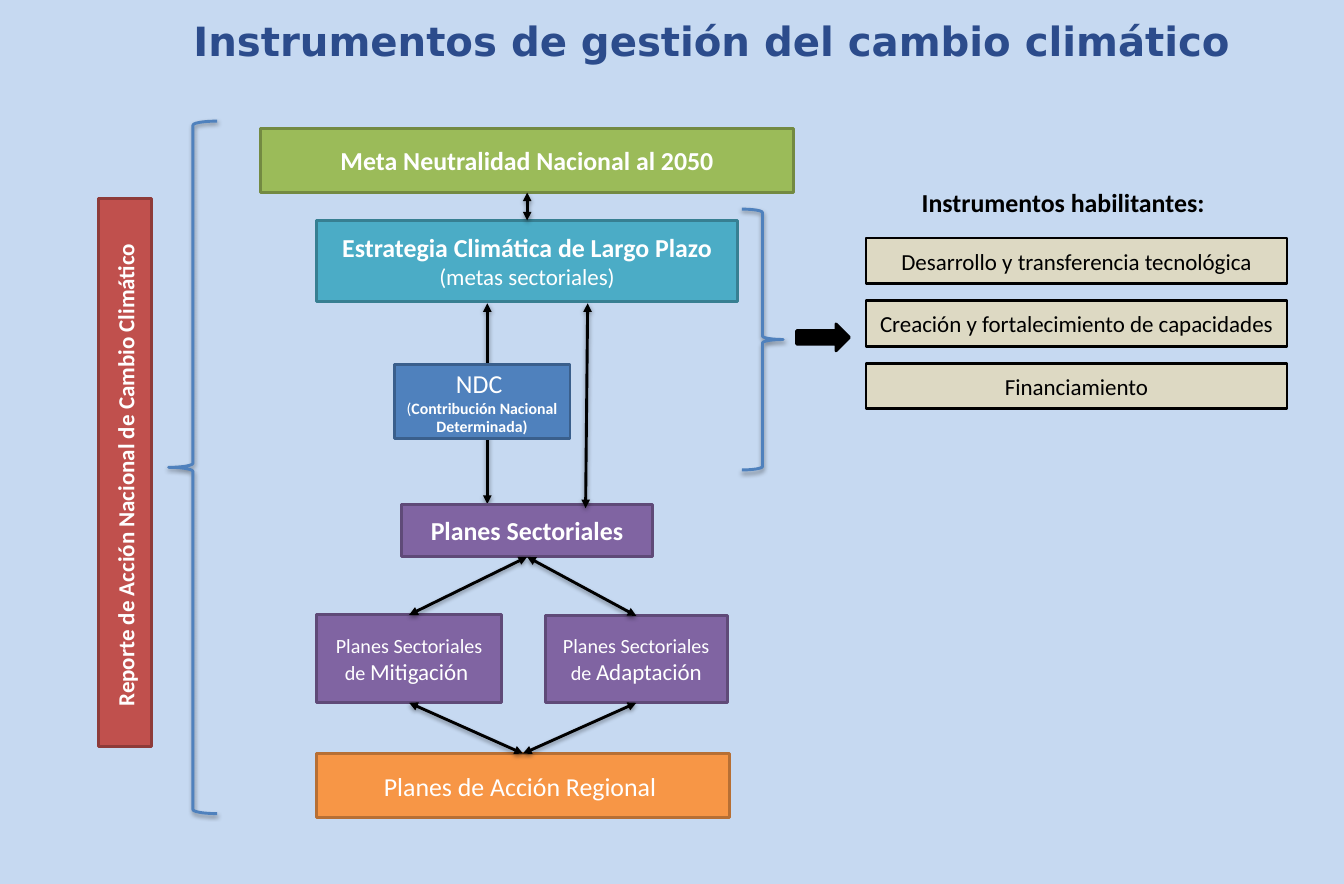
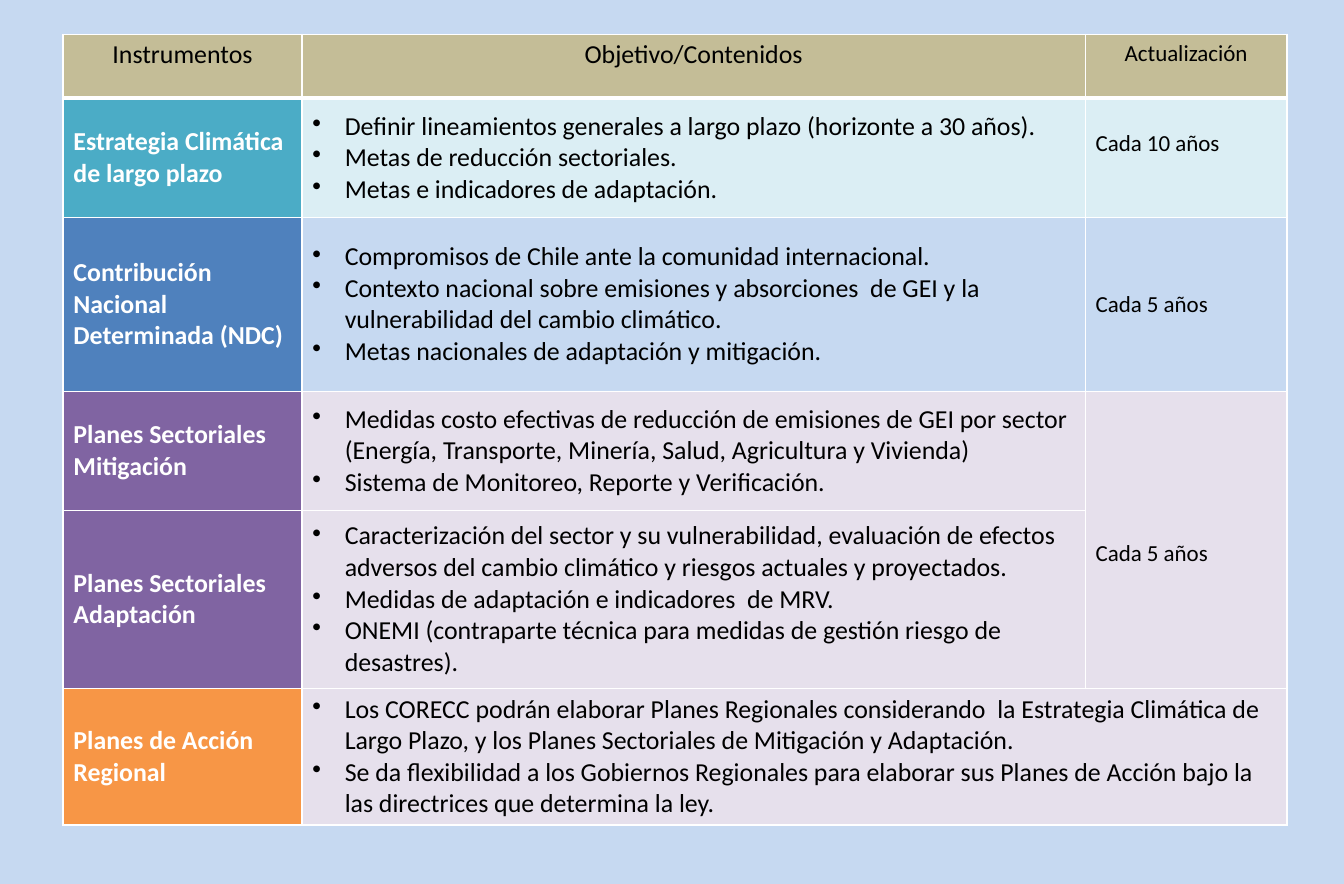
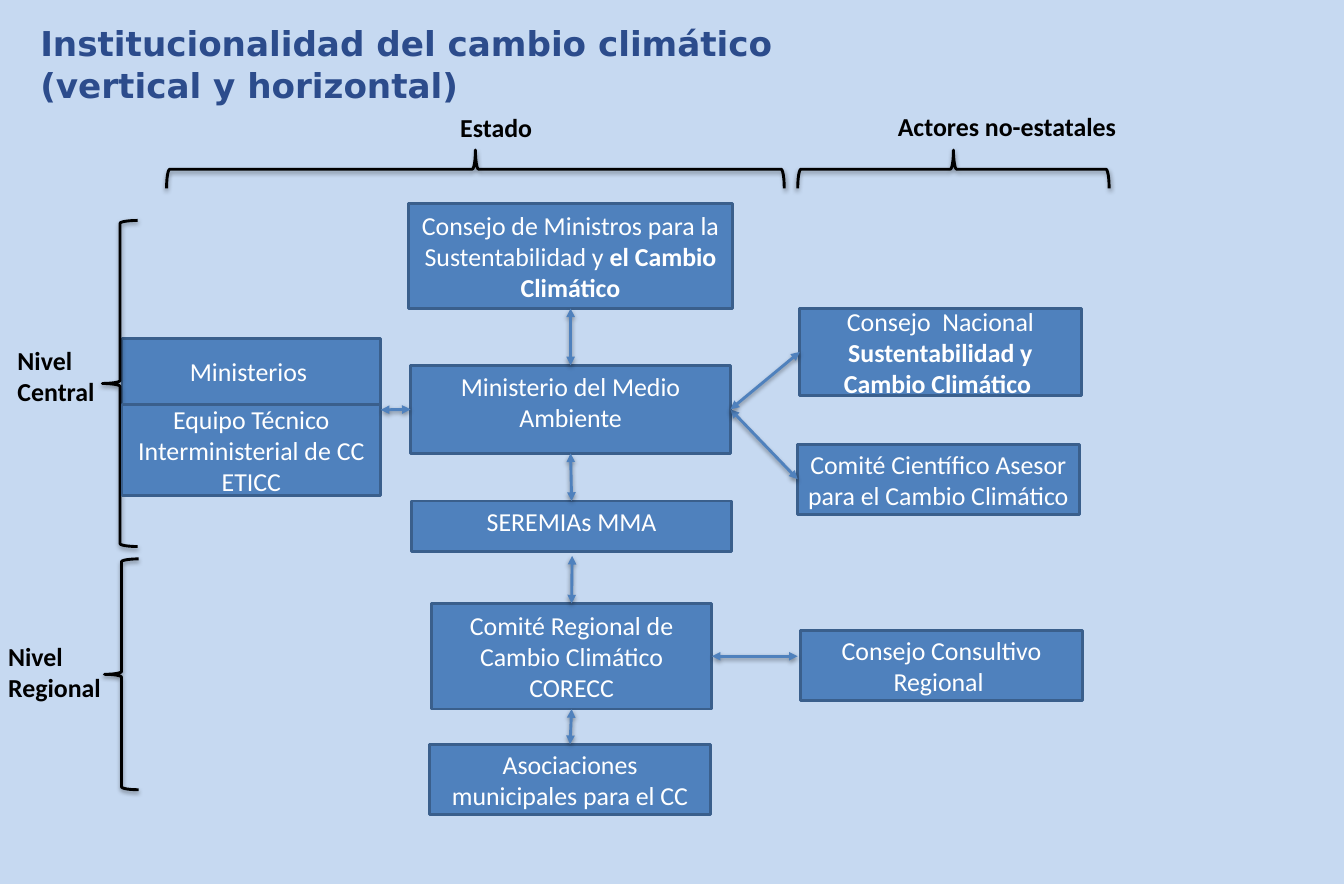
from dataclasses import dataclass

from lxml import etree
from pptx import Presentation
from pptx.dml.color import RGBColor
from pptx.enum.shapes import MSO_CONNECTOR, MSO_SHAPE
from pptx.enum.text import MSO_ANCHOR, PP_ALIGN
from pptx.oxml.ns import qn
from pptx.util import Emu, Pt

RECT, ARROW = MSO_SHAPE.RECTANGLE, MSO_SHAPE.RIGHT_ARROW
LBRACE, RBRACE = MSO_SHAPE.LEFT_BRACE, MSO_SHAPE.RIGHT_BRACE
STRAIGHT = MSO_CONNECTOR.STRAIGHT
LEFT, CENTER = PP_ALIGN.LEFT, PP_ALIGN.CENTER
TOP_ANC, MID_ANC = MSO_ANCHOR.TOP, MSO_ANCHOR.MIDDLE
TOP, WEST, BASE, EAST = range(4)

# The grid has square cells, ten to the inch.
CELL = 91440
COLS, ROWS = 129.9, 85.4


@dataclass(frozen=True)
class Theme:
    face: str = "Calibri"
    head: str = "DejaVu Sans"
    tiny: float = 11
    small: float = 14
    mid: float = 16
    body: float = 18
    sub: float = 23.8
    title: float = 28
    line: float = 2
    back: str = "C6D9F1"
    navy: str = "2C4C8C"
    black: str = "000000"
    white: str = "FFFFFF"
    stroke: str = "4F81BD"
    # Box styles: fill, outline, text
    blue: tuple = ("4F81BD", "3A5F8C", "FFFFFF")
    teal: tuple = ("4BACC6", "377F92", "FFFFFF")
    violet: tuple = ("8064A2", "5F4A78", "FFFFFF")
    orange: tuple = ("F79646", "B76F34", "FFFFFF")
    green: tuple = ("9BBB59", "738A42", "FFFFFF")
    red: tuple = ("C0504D", "8E3B39", "FFFFFF")
    sand: tuple = ("DDD9C3", "000000", "000000")
    ink: tuple = ("000000", "000000", "FFFFFF")
    # Table tints
    khaki: str = "C4BD97"
    aqua: str = "DBEEF4"
    lilac: str = "E6E0EC"


T = Theme()


def grid(*cells):
    return [Emu(round(n * CELL)) for n in cells]


def rgb(code):
    return RGBColor.from_string(code)


def bit(text, size=T.body, bold=False):
    """One run of text."""
    return text, size, bold


def write(frame, paras, color, align=LEFT, face=T.face, bullet=False):
    """Fill a frame; each paragraph is a list of runs."""
    frame.word_wrap = True
    for i, runs in enumerate(paras):
        para = frame.add_paragraph() if i else frame.paragraphs[0]
        para.alignment = align
        if bullet:
            prop = para._p.get_or_add_pPr()
            prop.set("marL", "285750")
            prop.set("indent", "-285750")
            etree.SubElement(prop, qn("a:buChar"), char="•")
        for text, size, bold in runs:
            run = para.add_run()
            run.text = text
            font = run.font
            font.name, font.size, font.bold = face, Pt(size), bold
            font.color.rgb = rgb(color)


def cast(item):
    """Give a line-like item its soft shadow."""
    props = item.element.spPr
    list_ = props.find(qn("a:effectLst"))
    if list_ is None:
        list_ = etree.SubElement(props, qn("a:effectLst"))
    outer = etree.SubElement(list_, qn("a:outerShdw"), blurRad="40000",
                             dist="20000", dir="5400000", rotWithShape="0")
    tone = etree.SubElement(outer, qn("a:srgbClr"), val=T.black)
    etree.SubElement(tone, qn("a:alpha"), val="38000")


def form(slide, kind, place, edge, turn=0):
    item = slide.shapes.add_shape(kind, *grid(*place))
    item.shadow.inherit = False
    item.rotation = turn
    item.line.color.rgb = rgb(edge)
    item.line.width = Pt(T.line)
    return item


def box(slide, place, style, paras=(), kind=RECT, turn=0, anchor=MID_ANC):
    fill, edge, color = style
    item = form(slide, kind, place, edge, turn)
    item.fill.solid()
    item.fill.fore_color.rgb = rgb(fill)
    item.text_frame.vertical_anchor = anchor
    write(item.text_frame, paras, color, CENTER)
    return item


def brace(slide, place, color, kind=LBRACE, turn=0):
    item = form(slide, kind, place, color, turn)
    item.fill.background()
    cast(item)


def label(slide, place, text):
    item = slide.shapes.add_textbox(*grid(*place))
    write(item.text_frame, [[bit(text, bold=True)]], T.black)


def title(slide, left, top, size, *lines):
    item = slide.shapes.add_textbox(*grid(left, top, 0.8 * COLS, 0.09 * ROWS))
    frame = item.text_frame
    frame.margin_left, frame.margin_right = grid(1.2, 1.2)
    frame.margin_top, frame.margin_bottom = grid(0.6, 0.6)
    write(frame, [[bit(line, size, True)] for line in lines], T.navy,
          face=T.head)


def link(slide, start, end, color):
    """Two-headed arrow; an end is a grid point or a (box, side) pair."""
    item = slide.shapes.add_connector(STRAIGHT, 0, 0, 0, 0)
    if isinstance(start[0], (int, float)):
        item.begin_x, item.begin_y = grid(*start)
    else:
        item.begin_connect(*start)
    if isinstance(end[0], (int, float)):
        item.end_x, item.end_y = grid(*end)
    else:
        item.end_connect(*end)
    item.line.color.rgb = rgb(color)
    item.line.width = Pt(T.line)
    stroke = item.element.spPr.find(qn("a:ln"))
    for tip in ("a:headEnd", "a:tailEnd"):
        etree.SubElement(stroke, qn(tip), type="triangle")
    cast(item)


def paint(cell, fill, base=1):
    """Set white borders, then the fill; base is the lower border's width."""
    props = cell._tc.get_or_add_tcPr()
    for side, width in (("L", 1), ("R", 1), ("T", 1), ("B", base)):
        edge = etree.SubElement(props, qn("a:ln" + side), w=str(Pt(width)))
        solid = etree.SubElement(edge, qn("a:solidFill"))
        etree.SubElement(solid, qn("a:srgbClr"), val=T.white)
    cell.fill.solid()
    cell.fill.fore_color.rgb = rgb(fill)


def tools(slide):
    title(slide, 17.5, 1, T.title,
          "Instrumentos de gestión del cambio climático")
    link(slide, (47.1, 29.3), (47.1, 48.7), T.black)

    goal = box(slide, (25.2, 12.4, 51.5, 6.2), T.green,
               [[bit("Meta Neutralidad Nacional al 2050", bold=True)]])
    plan = box(slide, (30.6, 21.3, 40.7, 7.8), T.teal,
               [[bit("Estrategia Climática de Largo Plazo", bold=True)],
                [bit("(metas sectoriales)", T.mid)]])
    sector = box(slide, (38.8, 48.7, 24.3, 5.1), T.violet,
                 [[bit("Planes Sectoriales", bold=True)]])
    pair = [
        box(slide, place, T.violet,
            [[bit("Planes Sectoriales de ", T.small), bit(name, T.mid)]])
        for place, name in (((30.6, 59.4, 17.9, 8.5), "Mitigación "),
                            ((52.7, 59.5, 17.6, 8.4), "Adaptación"))
    ]
    region = box(slide, (30.6, 72.8, 39.9, 6.2), T.orange,
                 [[bit("Planes de Acción Regional ")]])
    box(slide, (38.1, 35.2, 17, 7.2), T.blue,
        [[bit("NDC ")],
         [bit("(", T.tiny),
          bit("Contribución Nacional Determinada)", T.tiny, True)]])
    box(slide, (-14.4, 43.1, 53, 5.1), T.red,
        [[bit("Reporte de Acción Nacional de Cambio Climático ",
              T.mid, True)]], turn=270)

    label(slide, (88.1, 17.5, 32.2, 4), "Instrumentos habilitantes:")
    for i, name in enumerate(("Desarrollo y transferencia tecnológica",
                              "Creación y fortalecimiento de capacidades",
                              "Financiamiento")):
        box(slide, (83.7, 23 + 6.05 * i, 40.7, 4.4), T.sand,
            [[bit(name, T.mid)]])
    box(slide, (77, 31.3, 5.1, 2.6), T.ink, kind=ARROW)
    brace(slide, (16.3, 11.7, 4.7, 66.9), T.stroke)
    brace(slide, (71.7, 20.2, 4, 25.2), T.stroke, RBRACE)

    link(slide, (goal, BASE), (plan, TOP), T.black)
    link(slide, (56.8, 29.3), (56.6, 49.1), T.black)
    for part in pair:
        link(slide, (sector, BASE), (part, TOP), T.black)
        link(slide, (part, BASE), (region, TOP), T.black)


def detail(slide):
    """Table of instruments; a term is its text, top pad and bottom pad."""
    rows = (
        ("Estrategia Climática de largo plazo", T.teal, T.aqua,
         ("Definir lineamientos generales a largo plazo (horizonte a 30 años).",
          "Metas de reducción sectoriales.",
          "Metas e indicadores de adaptación."),
         ("Cada 10 años", 0.5, 3.2)),
        ("Contribución Nacional Determinada (NDC)", T.blue, T.back,
         ("Compromisos de Chile ante la comunidad internacional.",
          "Contexto nacional sobre emisiones y absorciones  de GEI y la "
          "vulnerabilidad del cambio climático.",
          "Metas nacionales de adaptación y mitigación."),
         ("Cada 5 años", 0.5, 0.5)),
        ("Planes Sectoriales Mitigación", T.violet, T.lilac,
         ("Medidas costo efectivas de reducción de emisiones de GEI por "
          "sector (Energía, Transporte, Minería, Salud, Agricultura y "
          "Vivienda)",
          "Sistema de Monitoreo, Reporte y Verificación."),
         ("Cada 5 años", 3.2, 0.5)),
        ("Planes Sectoriales Adaptación", T.violet, T.lilac,
         ("Caracterización del sector y su vulnerabilidad, evaluación de "
          "efectos adversos del cambio climático y riesgos actuales y "
          "proyectados.",
          "Medidas de adaptación e indicadores  de MRV.",
          "ONEMI (contraparte técnica para medidas de gestión riesgo de "
          "desastres)."), None),
        ("Planes de Acción Regional", T.orange, T.lilac,
         ("Los CORECC podrán elaborar Planes Regionales considerando  la "
          "Estrategia Climática de Largo Plazo, y los Planes Sectoriales de "
          "Mitigación y Adaptación.",
          "Se da flexibilidad a los Gobiernos Regionales para elaborar sus "
          "Planes de Acción bajo la las directrices que determina la ley."),
         None),
    )
    wide = (23.1, 75.7, 19.5)
    tall = (6.2, 11.5, 16.8, 11.5, 17.2, 13.2)
    place = grid(6.1, 3.3, sum(wide), sum(tall))
    table = slide.shapes.add_table(len(tall), len(wide), *place).table
    for col, width in zip(table.columns, grid(*wide)):
        col.width = width
    for row, height in zip(table.rows, grid(*tall)):
        row.height = height

    heads = (bit("Instrumentos"), bit("Objetivo/Contenidos"),
             bit("Actualización", T.mid))
    for i, head in enumerate(heads):
        cell = table.cell(0, i)
        paint(cell, T.khaki, 3)
        write(cell.text_frame, [[head]], T.black, CENTER)

    for i, (name, style, tint, points, term) in enumerate(rows, 1):
        cells = [table.cell(i, j) for j in range(3)]
        for cell, fill in zip(cells, (style[0], tint, tint)):
            paint(cell, fill)
            cell.vertical_anchor = MID_ANC
        write(cells[0].text_frame, [[bit(name, bold=True)]], T.white)
        write(cells[1].text_frame, [[bit(point)] for point in points],
              T.black, bullet=True)
        if term:
            text, above, below = term
            cells[2].margin_top, cells[2].margin_bottom = grid(above, below)
            write(cells[2].text_frame, [[bit(text, T.mid)]], T.black)
    table.cell(3, 2).merge(table.cell(4, 2))
    table.cell(5, 1).merge(table.cell(5, 2))


def bodies(slide):
    """Chart of institutions by level and sector."""
    def unit(place, *paras, anchor=MID_ANC):
        return box(slide, place, T.blue, paras, anchor=anchor)

    title(slide, 2.7, 1.6, T.sub, "Institucionalidad del cambio climático",
          "(vertical y horizontal)")
    main_ = unit((39.7, 35.3, 30.9, 8.5),
                 [bit("Ministerio del Medio Ambiente")], anchor=TOP_ANC)
    unit((11.8, 32.7, 25, 6.4), [bit("Ministerios ")])
    nation = unit((77.3, 29.8, 27.2, 8.4),
                  [bit("Consejo  Nacional "),
                   bit("Sustentabilidad y Cambio Climático ", bold=True)])
    brace(slide, (9.9, 21.3, 3.4, 31.5), T.black)
    unit((11.8, 39.1, 25, 8.8),
         [bit("Equipo Técnico Interministerial de CC")], [bit("ETICC")])
    board = unit((39.5, 19.7, 31.3, 10.1),
                 [bit("Consejo de Ministros para la Sustentabilidad y "),
                  bit("el Cambio Climático", bold=True)])
    local = unit((39.8, 48.4, 30.9, 4.9), [bit("SEREMIAs MMA")],
                 anchor=TOP_ANC)
    expert = unit((77.1, 42.9, 27.2, 6.8),
                  [bit("Comité Científico Asesor para el Cambio Climático")])
    region = unit((41.7, 58.3, 27.1, 10.2),
                  [bit("Comité Regional de Cambio Climático")],
                  [bit("CORECC")])
    unit((77.4, 60.9, 27.2, 6.8), [bit("Consejo Consultivo Regional ")])
    towns = unit((41.5, 71.9, 27.2, 6.8),
                 [bit("Asociaciones municipales para el CC")])

    brace(slide, (10.1, 54, 3.3, 22.3), T.black)
    brace(slide, (44.1, -13.5, 3.7, 59.7), T.black, turn=90)
    brace(slide, (90.3, 1.3, 3.7, 30.1), T.black, turn=90)
    label(slide, (0.7, 32.8, 11.8, 7.1), "Nivel Central")
    label(slide, (-0.2, 61.4, 11.8, 7.1), "Nivel Regional")
    label(slide, (43.5, 10.3, 23.7, 4), "Estado")
    label(slide, (85.8, 10.2, 23.7, 4), "Actores no-estatales")

    for start, end in (((board, BASE), (main_, TOP)),
                       ((main_, BASE), (local, TOP)),
                       ((main_, WEST), (36.8, 39.6)),
                       ((main_, EAST), (expert, WEST)),
                       ((nation, WEST), (main_, EAST)),
                       ((55.3, 53.7), (region, TOP)),
                       ((region, BASE), (towns, TOP)),
                       ((77.1, 63.4), (region, EAST))):
        link(slide, start, end, T.stroke)


def main():
    prs = Presentation()
    prs.slide_width, prs.slide_height = grid(COLS, ROWS)
    fill = prs.slide_master.background.fill
    fill.solid()
    fill.fore_color.rgb = rgb(T.back)
    for draw in (tools, detail, bodies):
        draw(prs.slides.add_slide(prs.slide_layouts[6]))
    prs.save("out.pptx")


if __name__ == "__main__":
    main()
